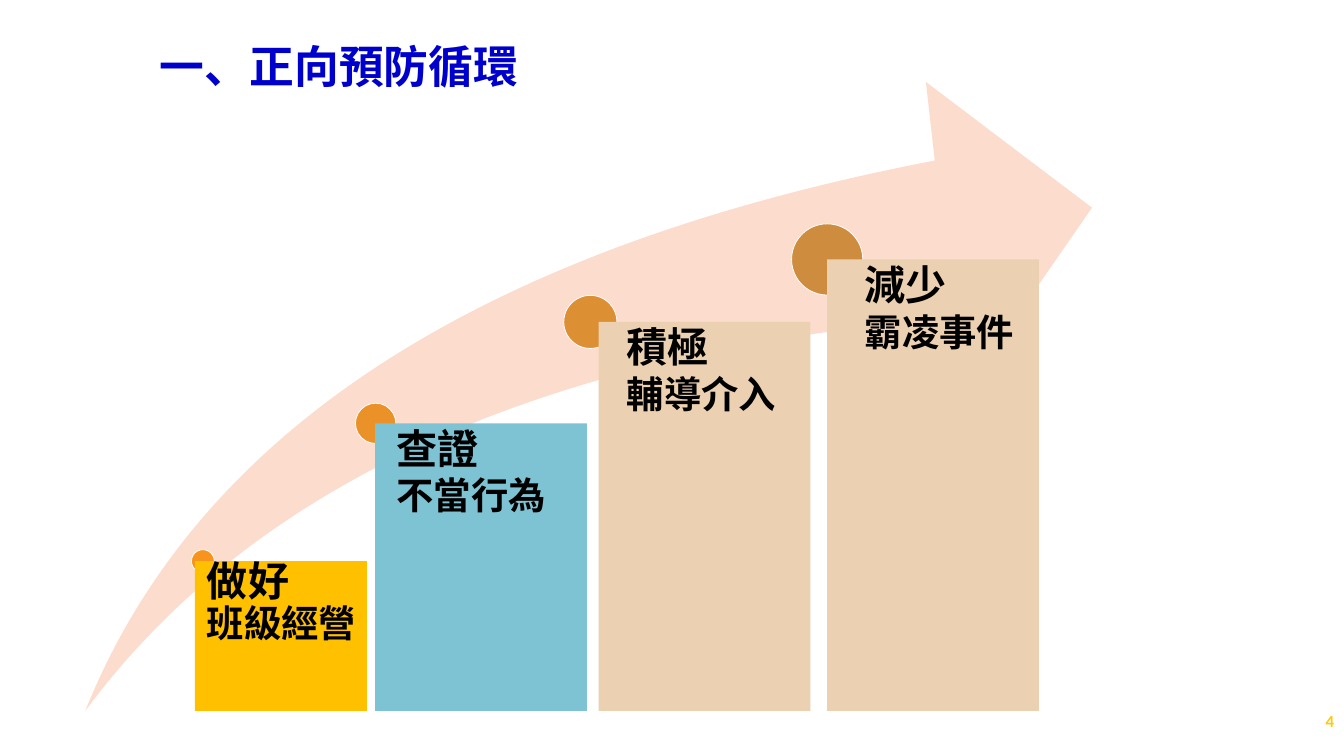
from pptx import Presentation
from pptx.dml.color import RGBColor
from pptx.enum.shapes import MSO_SHAPE as Shape
from pptx.enum.text import MSO_ANCHOR as Anchor, PP_ALIGN as Align
from pptx.util import Pt

# Steps: heading, detail, bar colour, bar left, top, width,
# text indent, line spacing, dot centre, dot size, dot colour
STEPS = [
    ("做好", "班級經營", "FFC000", 208.8, 601.2, 184.3, 13, 0.9, 217.4, 24.5, "F8931D"),
    ("查證", "不當行為", "7EC3D4", 402, 453.6, 226.8, 23, 1.0, 402.5, 43.2, "EA9128"),
    ("積極", "輔導介入", "EBD1B2", 641.5, 344.9, 226.8, 30.2, 1.0, 632.5, 56.9, "DC8F33"),
    ("減少", "霸凌事件", "EBD1B2", 886.3, 278, 226.8, 40.3, 1.0, 886.3, 76.3, "CE8D3E"),
]


def color(hex_value):
    return RGBColor.from_string(hex_value)


def style(paragraph, size, font_name, hex_value):
    font = paragraph.font
    font.size, font.name, font.bold = Pt(size), font_name, True
    font.color.rgb = color(hex_value)


def add_shape(slide, kind, box, fill, line=None):
    shape = slide.shapes.add_shape(kind, *map(Pt, box))
    shape.shadow.inherit = False
    shape.fill.solid()
    shape.fill.fore_color.rgb = color(fill)
    if line:
        shape.line.color.rgb = color(line)
        shape.line.width = Pt(0.85)
    else:
        shape.line.fill.background()
    return shape


def add_label(slide, box, text, size, font_name, hex_value, align=Align.LEFT):
    frame = slide.shapes.add_textbox(*map(Pt, box)).text_frame
    frame.word_wrap = True
    frame.vertical_anchor = Anchor.MIDDLE
    paragraph = frame.paragraphs[0]
    paragraph.text = text
    paragraph.alignment = align
    style(paragraph, size, font_name, hex_value)


def add_step(slide, baseline, step):
    (heading, detail, fill, left, top, width,
     indent, spacing, dot_center, dot_size, dot_fill) = step

    # Dot centred on the top edge of the bar
    dot_box = (dot_center - dot_size / 2, top - dot_size / 2, dot_size, dot_size)
    add_shape(slide, Shape.OVAL, dot_box, dot_fill, "FFFFFF")

    # Bar with its two lines of text
    bar = add_shape(slide, Shape.RECTANGLE, (left, top, width, baseline - top), fill)
    frame = bar.text_frame
    frame.word_wrap = True
    frame.vertical_anchor = Anchor.TOP
    frame.margin_left = Pt(indent)
    frame.margin_top = frame.margin_right = frame.margin_bottom = 0
    frame.text = f"{heading}\n{detail}"
    for paragraph, size in zip(frame.paragraphs, (44, 40)):
        paragraph.alignment = Align.LEFT
        paragraph.line_spacing = spacing
        style(paragraph, size, "Calibri", "000000")


def add_rising_steps(slide, box):
    # Arrow behind the bars, which stand on its lower edge
    arrow = add_shape(slide, Shape.SWOOSH_ARROW, box, "FCDCCD")
    arrow.adjustments[0] = arrow.adjustments[1] = 0.25
    baseline = box[1] + box[3]
    for step in STEPS:
        add_step(slide, baseline, step)


def main():
    presentation = Presentation()
    presentation.slide_width, presentation.slide_height = Pt(1440), Pt(810)
    slide = presentation.slides.add_slide(presentation.slide_layouts[6])

    # Slide number and title
    add_label(slide, (1255.7, 751, 180.7, 43.2), "4", 18, "Calibri", "FFCA08", Align.RIGHT)
    add_label(slide, (164.2, 19.4, 1236.2, 102.2), "一、正向預防循環", 48, "Arial", "0000CC")

    add_rising_steps(slide, (91.4, 87.8, 1078.6, 673.9))
    presentation.save("out.pptx")


if __name__ == "__main__":
    main()
